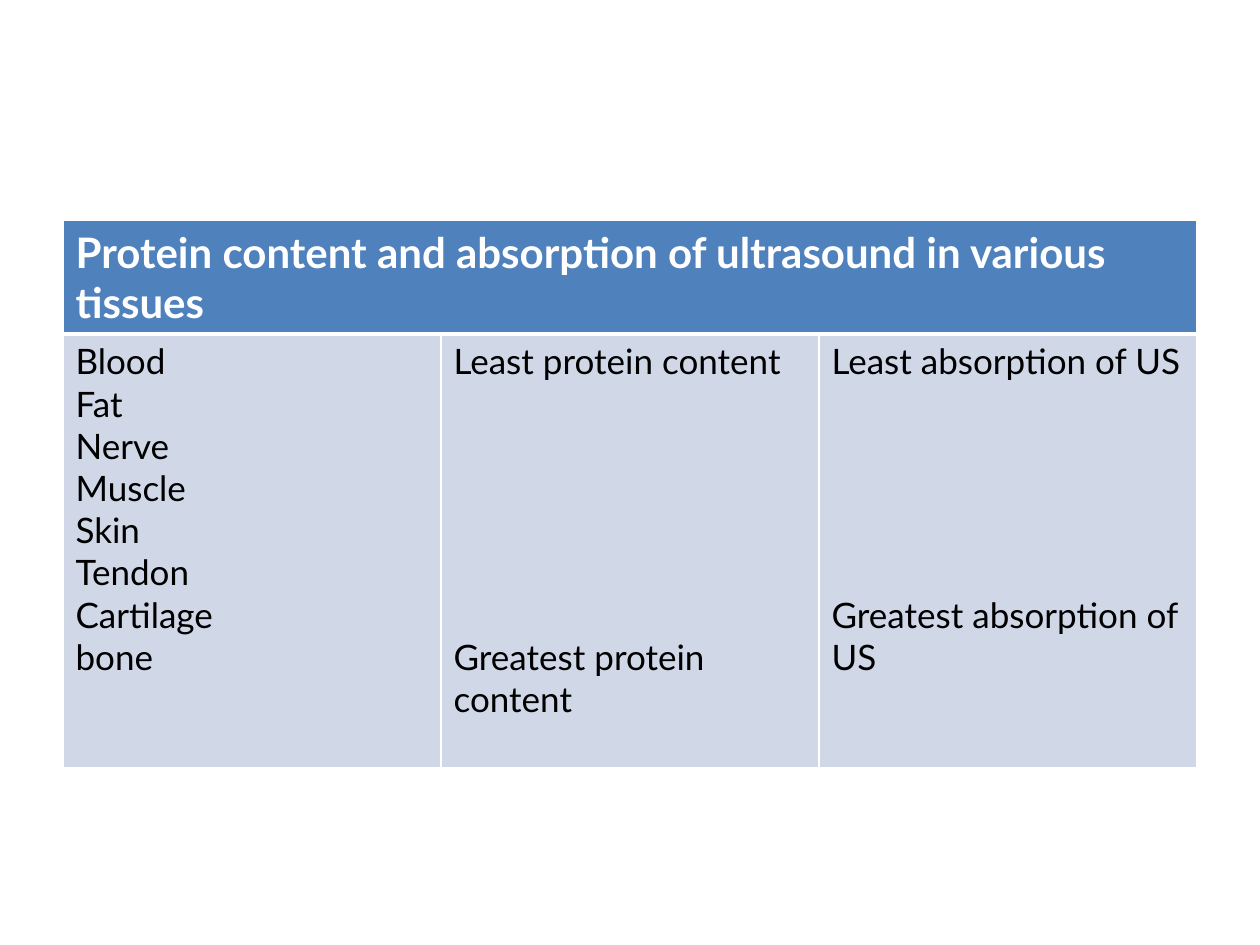
from lxml import etree
from pptx import Presentation
from pptx.dml.color import RGBColor
from pptx.oxml import ns
from pptx.util import Pt

COLORS = {"header": "4F81BD", "body": "D0D8E8", "line": "FFFFFF",
          "header_text": "FFFFFF", "body_text": "000000"}
HEADER_FONT = {"name": "Lato", "size": Pt(24), "bold": True}
BODY_FONT = {"name": "Lato", "size": Pt(20), "bold": False}
LINE_PITCH = 24.15
ROW_HEIGHTS = (64.4, 248)
HEADING = "Protein content and absorption of ultrasound in various tissues"
TISSUES = ["Blood", "Fat", "Nerve", "Muscle", "Skin", "Tendon", "Cartilage", "bone"]
COLUMNS = [
    (TISSUES, 0),
    (["Least protein content", "Greatest protein content"], 6),
    (["Least absorption of US", "Greatest absorption of US"], 5),
]


def set_borders(cell, bottom=1):
    tcPr = cell._tc.get_or_add_tcPr()
    widths = {"lnL": 1, "lnR": 1, "lnT": 1, "lnB": bottom}
    for i, (side, width) in enumerate(widths.items()):
        ln = etree.Element(ns.qn(f"a:{side}"), w=str(Pt(width)))
        fill = etree.SubElement(ln, ns.qn("a:solidFill"))
        etree.SubElement(fill, ns.qn("a:srgbClr"), val=COLORS["line"])
        tcPr.insert(i, ln)


def fill_cell(cell, lines, role, font, skipped=0):
    cell.fill.solid()
    cell.fill.fore_color.rgb = RGBColor.from_string(COLORS[role])
    tf = cell.text_frame
    for i, line in enumerate(lines):
        p = tf.add_paragraph() if i else tf.paragraphs[0]
        if i and skipped:
            p.space_before = Pt(round(skipped * LINE_PITCH, 2))
        r = p.add_run()
        r.text = line
        for name, value in font.items():
            setattr(r.font, name, value)
        r.font.color.rgb = RGBColor.from_string(COLORS[f"{role}_text"])


def add_tissue_table(slide, left, top, width):
    count = len(COLUMNS)
    table = slide.shapes.add_table(2, count, Pt(left), Pt(top), Pt(width),
                                   Pt(sum(ROW_HEIGHTS))).table
    for column in table.columns:
        column.width = Pt(width / count)
    for row, height in zip(table.rows, ROW_HEIGHTS):
        row.height = Pt(height)
    for c, (lines, skipped) in enumerate(COLUMNS):
        fill_cell(table.cell(0, c), [HEADING] if c == 0 else [], "header", HEADER_FONT)
        set_borders(table.cell(0, c), bottom=3)
        fill_cell(table.cell(1, c), lines, "body", BODY_FONT, skipped)
        set_borders(table.cell(1, c))
    table.cell(0, 0).merge(table.cell(0, count - 1))


def main():
    prs = Presentation()
    prs.slide_width, prs.slide_height = Pt(720), Pt(540)
    slide = prs.slides.add_slide(prs.slide_layouts[6])
    add_tissue_table(slide, 36, 126, 648)
    prs.save("out.pptx")


if __name__ == "__main__":
    main()
